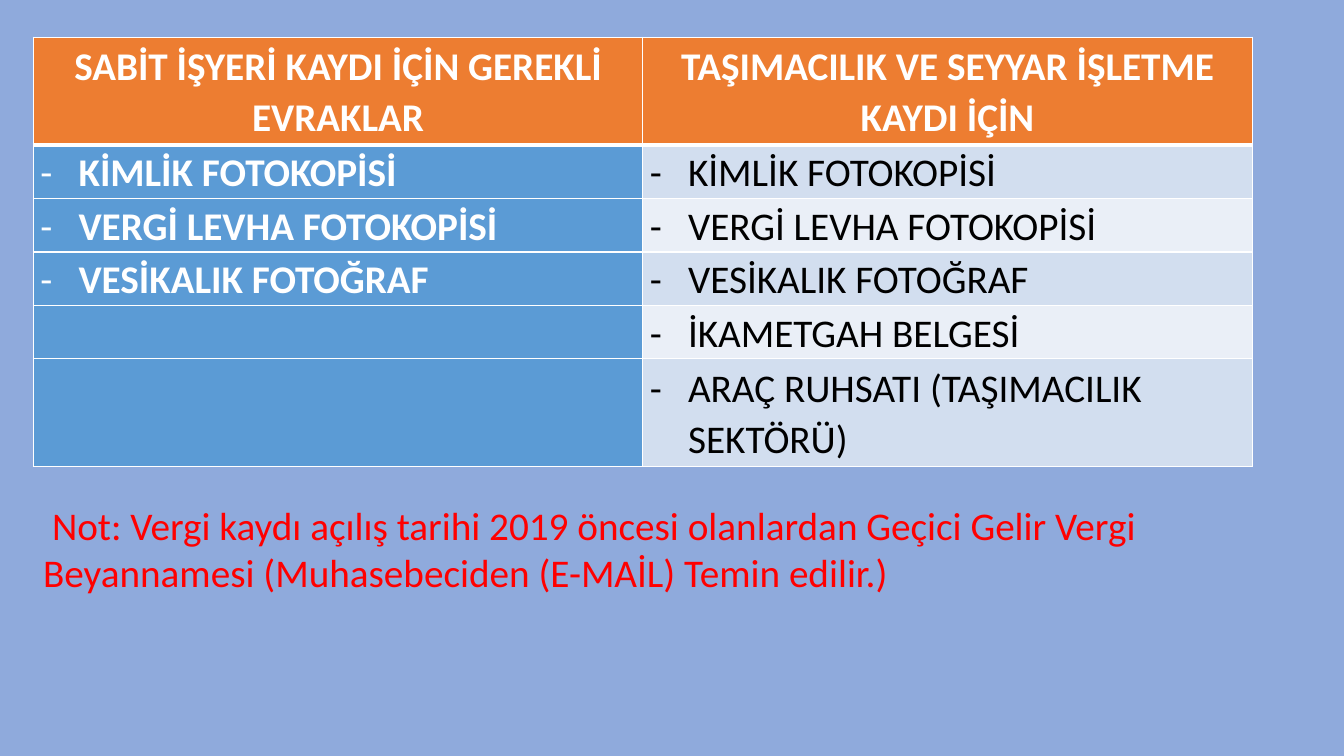
from lxml.etree import SubElement as add_element
from pptx import Presentation
from pptx.dml.color import RGBColor
from pptx.enum.text import MSO_ANCHOR as Anchor, MSO_AUTO_SIZE as AutoSize, PP_ALIGN as Align
from pptx.oxml.ns import qn
from pptx.util import Inches, Pt

HEADERS = ["SABİT İŞYERİ KAYDI İÇİN GEREKLİ EVRAKLAR", "TAŞIMACILIK VE SEYYAR İŞLETME KAYDI İÇİN"]
DOCUMENTS = [
    ["KİMLİK FOTOKOPİSİ", "KİMLİK FOTOKOPİSİ"],
    ["VERGİ LEVHA FOTOKOPİSİ", "VERGİ LEVHA FOTOKOPİSİ"],
    ["VESİKALIK FOTOĞRAF", "VESİKALIK FOTOĞRAF"],
    ["", "İKAMETGAH BELGESİ"],
    ["", "ARAÇ RUHSATI (TAŞIMACILIK SEKTÖRÜ)"],
]
NOTE = (" Not: Vergi kaydı açılış tarihi 2019 öncesi olanlardan Geçici Gelir Vergi "
        "Beyannamesi (Muhasebeciden (E-MAİL) Temin edilir.)")
ROW_HEIGHTS = [1.07, 0.53, 0.53, 0.53, 0.53, 1.07]


def color(value):
    return RGBColor.from_string(value)


def apply(target, values):
    for name, value in values.items():
        setattr(target, name, value)


class SlideBuilder:
    """Draws styled elements on the current slide."""

    font = {"name": "Calibri", "size": Pt(28)}
    cell_format = {"vertical_anchor": Anchor.MIDDLE, "margin_left": Inches(0.07),
                   "margin_right": Inches(0.07), "margin_top": 0, "margin_bottom": 0}
    white, black, red = "FFFFFF", "000000", "FF0000"
    header_fill, label_fill = "ED7D31", "5B9BD5"
    bands = ["D2DEEF", "EAEFF7"]

    def __init__(self, page):
        self.page = page

    def background(self, fill):
        self.page.background.fill.solid()
        self.page.background.fill.fore_color.rgb = color(fill)

    def add_text(self, para, text, ink, bold=False):
        span = para.add_run()
        span.text = text
        apply(span.font, {**self.font, "bold": bold})
        span.font.color.rgb = color(ink)

    def bullet(self, para):
        properties = para._p.get_or_add_pPr()
        properties.set("marL", str(Inches(0.38)))
        properties.set("indent", str(-Inches(0.38)))
        add_element(properties, qn("a:buFont"), typeface=self.font["name"])
        add_element(properties, qn("a:buChar"), char="-")

    def borders(self, cell, widths):
        properties = cell._tc.get_or_add_tcPr()
        for side, width in zip("LRTB", widths):
            line = add_element(properties, qn(f"a:ln{side}"), w=str(Pt(width)))
            fill = add_element(line, qn("a:solidFill"))
            add_element(fill, qn("a:srgbClr"), val=self.white)

    def cell(self, cell, text, row, column):
        header, label = row == 0, column == 0
        fill = self.header_fill if header else self.label_fill if label else self.bands[(row - 1) % 2]
        self.borders(cell, [1, 1, 3 if row == 1 else 1, 3 if header else 1])
        cell.fill.solid()
        cell.fill.fore_color.rgb = color(fill)
        apply(cell, self.cell_format)
        if not text:
            return
        para = cell.text_frame.paragraphs[0]
        apply(para, {"line_spacing": 1.07, "alignment": Align.CENTER if header else Align.LEFT})
        if not header:
            self.bullet(para)
        strong = header or label
        self.add_text(para, text, self.white if strong else self.black, strong)

    def table(self, left, top, width, heights, rows):
        frame = self.page.shapes.add_table(len(rows), len(rows[0]), Inches(left), Inches(top),
                                           Inches(width), Inches(sum(heights)))
        for row, (height, texts) in enumerate(zip(heights, rows)):
            frame.table.rows[row].height = Inches(height)
            for column, text in enumerate(texts):
                self.cell(frame.table.cell(row, column), text, row, column)

    def note(self, left, top, width, height, text):
        box = self.page.shapes.add_textbox(Inches(left), Inches(top), Inches(width), Inches(height))
        apply(box.text_frame, {"word_wrap": True, "auto_size": AutoSize.SHAPE_TO_FIT_TEXT})
        self.add_text(box.text_frame.paragraphs[0], text, self.red)


def main():
    deck = Presentation()
    apply(deck, {"slide_width": Inches(13.33), "slide_height": Inches(7.5)})
    builder = SlideBuilder(deck.slides.add_slide(deck.slide_layouts[6]))
    builder.background("8FAADC")
    builder.table(0.33, 0.37, 12.09, ROW_HEIGHTS, [HEADERS, *DOCUMENTS])
    builder.note(0.33, 4.92, 12.09, 1.04, NOTE)
    deck.save("out.pptx")


if __name__ == "__main__":
    main()
